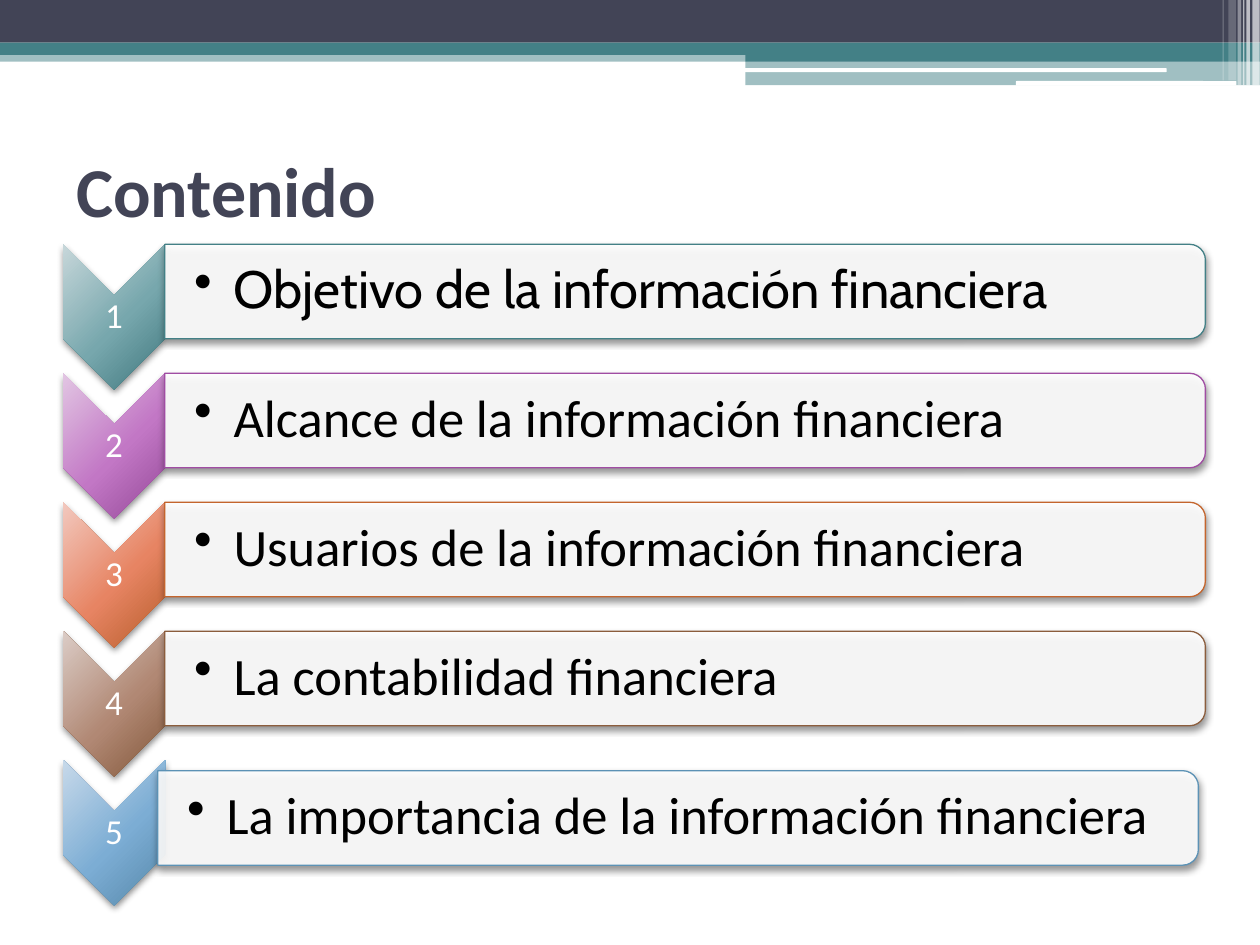
from lxml import etree
from pptx import Presentation
from pptx import util as u
from pptx.dml.color import RGBColor
from pptx.enum import shapes, text
from pptx.oxml import parse_xml
from pptx.oxml.ns import nsdecls, qn

COLORS = {"navy": "424456", "teal": "438086", "white": "FFFFFF", "black": "000000"}
SHAPE = shapes.MSO_SHAPE
ALIGN = text.PP_ALIGN

# Wording, font, bar outline, chevron gradient, bar offset
ITEMS = [
    ("Objetivo de la información financiera", "Cabin", "438086",
     ("C7D7DA", "77A7AD", "3E777D"), (0, 0)),
    ("Alcance de la información financiera", "Calibri", "A04DA3",
     ("E2C6E3", "C277C5", "954898"), (0, 0)),
    ("Usuarios de la información financiera", "Calibri", "C4652D",
     ("F2C9BF", "E78463", "B75E2A"), (0, 0)),
    ("La contabilidad financiera", "Calibri", "8B5D3D",
     ("DBCCC6", "B18874", "825739"), (0, 0)),
    ("La importancia de la información financiera", "Calibri", "5C92B5",
     ("C7D9EA", "7CADD4", "5688A9"), (-4, 6)),
]


class Deck:
    def __init__(self, width, height, font="Calibri"):
        self.prs = Presentation()
        self.prs.slide_width, self.prs.slide_height = u.Pt(width), u.Pt(height)
        self.font = font
        self.s = self.prs.slides.add_slide(self.prs.slide_layouts[6])

    def shape(self, kind, x, y, w, h, fill, alpha=100):
        sp = self.s.shapes.add_shape(kind, u.Pt(x), u.Pt(y), u.Pt(w), u.Pt(h))
        sp.shadow.inherit = False
        sp.line.fill.background()
        sp.fill.solid()
        sp.fill.fore_color.rgb = RGBColor.from_string(fill)
        if alpha < 100:
            color = sp._element.spPr.find(qn("a:solidFill"))[0]
            etree.SubElement(color, qn("a:alpha"), val=str(alpha * 1000))
        return sp

    def turned(self, kind, cx, cy, w, h, fill, alpha=100):
        """A shape turned a quarter clockwise about its centre, with a shadow."""
        sp = self.shape(kind, cx - w / 2, cy - h / 2, w, h, fill, alpha)
        sp.rotation = 90
        sp._element.spPr.find(qn("a:effectLst")).append(parse_xml(
            f'<a:outerShdw {nsdecls("a")} blurRad="{u.Pt(4)}" dist="{u.Pt(2)}" '
            'dir="5400000" rotWithShape="0"><a:srgbClr val="000000">'
            '<a:alpha val="45000"/></a:srgbClr></a:outerShdw>'))
        return sp

    def chevron(self, cx, cy, w, h, colors):
        sp = self.turned(SHAPE.CHEVRON, cx, cy, w, h, colors[1])
        stops = "".join(f'<a:gs pos="{pos}"><a:srgbClr val="{c}"/></a:gs>'
                        for pos, c in zip((0, 55000, 100000), colors))
        grad = parse_xml(
            f'<a:gradFill {nsdecls("a")} rotWithShape="1"><a:gsLst>{stops}</a:gsLst>'
            '<a:path path="circle"><a:fillToRect l="-40000" t="-90000" '
            'r="140000" b="190000"/></a:path></a:gradFill>')
        spPr = sp._element.spPr
        spPr.replace(spPr.find(qn("a:solidFill")), grad)

    def bar(self, cx, cy, w, h, outline):
        sp = self.turned(SHAPE.ROUND_2_SAME_RECTANGLE, cx, cy, w, h, COLORS["white"], 90)
        sp.line.color.rgb = RGBColor.from_string(outline)
        sp.line.width = u.Pt(0.75)

    def label(self, words, x, y, w, h, size, color, font=None, bold=False,
              align=ALIGN.LEFT, left=7.2, right=7.2, spacing=1.0, bullet=False):
        tf = self.s.shapes.add_textbox(u.Pt(x), u.Pt(y), u.Pt(w), u.Pt(h)).text_frame
        tf.word_wrap = True
        tf.vertical_anchor = text.MSO_ANCHOR.MIDDLE
        tf.margin_left, tf.margin_right = u.Pt(left), u.Pt(right)
        tf.margin_top = tf.margin_bottom = u.Pt(1)
        p = tf.paragraphs[0]
        p.text, p.alignment, p.line_spacing = words, align, spacing
        p.font.name, p.font.size, p.font.bold = font or self.font, u.Pt(size), bold
        p.font.color.rgb = RGBColor.from_string(color)
        if bullet:
            pPr = p._p.get_or_add_pPr()
            indent = u.Pt(22.5)
            pPr.set("marL", str(indent))
            pPr.set("indent", str(-indent))
            # The bullet goes before the default run properties
            pPr.find(qn("a:defRPr")).addprevious(
                parse_xml(f'<a:buChar {nsdecls("a")} char="•"/>'))


def main():
    deck = Deck(720, 540)
    white, teal = COLORS["white"], COLORS["teal"]

    # Header bands
    for x, y, w, h, fill, alpha in [
        (0, 28.8, 720, 6.5, teal, 50),
        (0, 0, 720, 24.4, COLORS["navy"], 100),
        (0, 24.4, 720, 7, teal, 100),
        (426, 28, 294, 7.2, teal, 100),
        (426, 35.2, 294, 13.5, teal, 50),
    ]:
        deck.shape(SHAPE.RECTANGLE, x, y, w, h, fill, alpha)
    for x, y, w, h in [(425.5, 39, 241.2, 2.2), (580.5, 46.3, 126, 2.7)]:
        deck.shape(SHAPE.ROUNDED_RECTANGLE, x, y, w, h, white)

    # Vertical stripes at the right edge
    for x, w, h, alpha in [(715.6, 4.2, 48.8, 65), (712.2, 2, 48.8, 65),
                           (710.4, 0.7, 48.8, 60), (707.2, 2, 48.8, 40),
                           (702, 4.3, 46, 20), (698.6, 0.7, 46, 30)]:
        deck.shape(SHAPE.RECTANGLE, x, 0, w, h, white, alpha)

    # Title
    deck.label("Contenido", 36.5, 66.2, 648, 84.2, 40, COLORS["navy"], bold=True)

    # Numbered list
    pitch = 73.7
    for i, (words, font, outline, gradient, (dx, dy)) in enumerate(ITEMS):
        top = i * pitch
        deck.chevron(65.2, top + 181.1, 83, 58.2, gradient)
        deck.label(str(i + 1), 36, top + 168.6, 58.2, 25, 20, white,
                   align=ALIGN.CENTER, left=1, right=1, spacing=0.9)
        cx, cy = 391.5 + dx, top + 166.6 + dy
        deck.bar(cx, cy, 54, 594.6, outline)
        deck.label(words, cx - 297.3, cy - 24.4, 592, 48.8, 30, COLORS["black"], font,
                   left=16.8, right=1.5, spacing=0.9, bullet=True)

    deck.prs.save("out.pptx")


if __name__ == "__main__":
    main()
